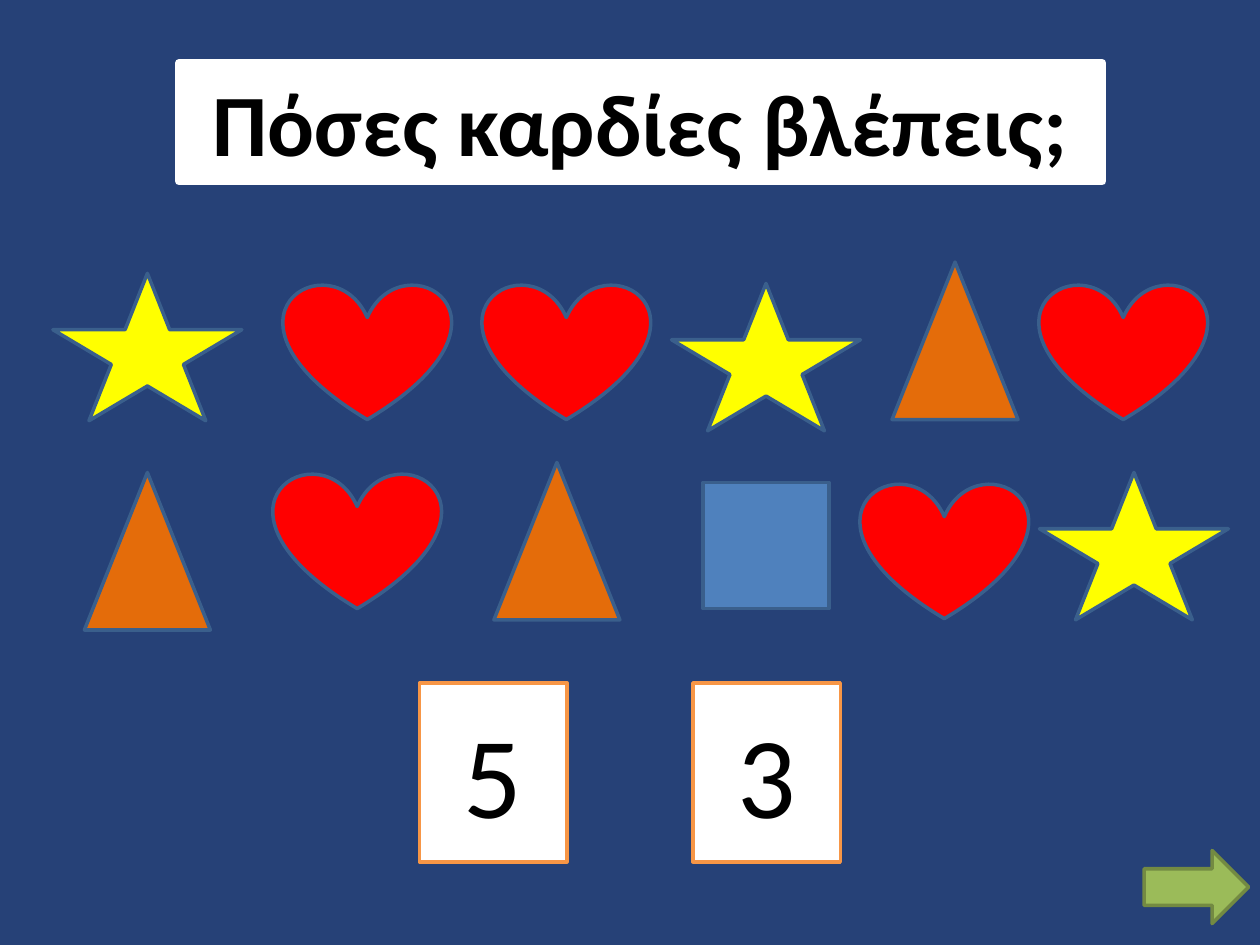
import pptx
import pptx.dml.color
import pptx.enum.shapes
import pptx.enum.text
import pptx.oxml
import pptx.oxml.ns
import pptx.util
from pptx.util import Inches

SHAPE = pptx.enum.shapes.MSO_SHAPE

COLORS = {
    "background": "264177",
    "star": "FFFF00",
    "heart": "FF0000",
    "triangle": "E46C0A",
    "square": "4F81BD",
    "figure_line": "3A5F8C",
    "white": "FFFFFF",
    "answer_line": "F79646",
    "arrow": "9BBB59",
    "arrow_line": "738A42",
    "text": "000000",
}

# Preset, width and height of each kind of figure
FIGURES = {
    "star": (SHAPE.STAR_5_POINT, 1.5, 1.17),
    "heart": (SHAPE.HEART, 1.33, 1.08),
    "triangle": (SHAPE.ISOSCELES_TRIANGLE, 1, 1.25),
    "square": (SHAPE.RECTANGLE, 1, 1),
}

# Kind, left and top of each figure to count
FIGURE_PLACES = [
    # Upper row
    ("star", 0.42, 2.17),
    ("heart", 2.25, 2.25),
    ("heart", 3.83, 2.25),
    ("star", 5.33, 2.25),
    ("triangle", 7.08, 2.08),
    ("heart", 8.25, 2.25),
    # Lower row
    ("triangle", 0.67, 3.75),
    ("heart", 2.17, 3.75),
    ("triangle", 3.92, 3.67),
    ("square", 5.58, 3.83),
    ("heart", 6.83, 3.83),
    ("star", 8.25, 3.75),
]


def color(name):
    return pptx.dml.color.RGBColor.from_string(COLORS[name])


def add_figure(slide, preset, left, top, width, height, fill, line, line_width=2):
    shape = slide.shapes.add_shape(
        preset, Inches(left), Inches(top), Inches(width), Inches(height))
    shape.shadow.inherit = False
    shape.fill.solid()
    shape.fill.fore_color.rgb = color(fill)
    shape.line.color.rgb = color(line)
    shape.line.width = pptx.util.Pt(line_width)
    return shape


def write_text(shape, text, size, anchor, bold=False):
    shape.text_frame.word_wrap = True
    shape.text_frame.vertical_anchor = anchor
    paragraph = shape.text_frame.paragraphs[0]
    paragraph.alignment = pptx.enum.text.PP_ALIGN.CENTER
    run = paragraph.add_run()
    run.text = text
    font = paragraph.font
    font.name = "Calibri"
    font.size = pptx.util.Pt(size)
    font.bold = bold
    font.color.rgb = color("text")
    return run


def outline_text(run, line_width):
    outline = pptx.oxml.parse_xml(
        f'<a:ln {pptx.oxml.ns.nsdecls("a")} w="{pptx.util.Pt(line_width)}"><a:solidFill>'
        f'<a:srgbClr val="{COLORS["text"]}"/></a:solidFill></a:ln>')
    run._r.get_or_add_rPr().insert(0, outline)


def add_title(slide, text):
    box = add_figure(slide, SHAPE.RECTANGLE, 1.42, 0.5, 7.33, 0.94, "white", "white", 4.5)
    run = write_text(box, text, 50, pptx.enum.text.MSO_ANCHOR.TOP, bold=True)
    outline_text(run, 0.75)


def add_answer(slide, text, left):
    box = add_figure(slide, SHAPE.RECTANGLE, left, 5.42, 1.17, 1.42, "white", "answer_line")
    write_text(box, text, 66, pptx.enum.text.MSO_ANCHOR.MIDDLE)


def main():
    presentation = pptx.Presentation()
    presentation.slide_width = Inches(10)
    presentation.slide_height = Inches(7.5)
    slide = presentation.slides.add_slide(presentation.slide_layouts[6])
    slide.background.fill.solid()
    slide.background.fill.fore_color.rgb = color("background")

    # Question
    add_title(slide, "Πόσες καρδίες βλέπεις;")

    # Figures to count
    for kind, left, top in FIGURE_PLACES:
        preset, width, height = FIGURES[kind]
        add_figure(slide, preset, left, top, width, height, kind, "figure_line")

    # Answers
    add_answer(slide, "5", 3.33)
    add_answer(slide, "3", 5.5)

    # Arrow to the next question
    add_figure(slide, SHAPE.RIGHT_ARROW, 9.08, 6.75, 0.83, 0.58, "arrow", "arrow_line")

    presentation.save("out.pptx")


if __name__ == "__main__":
    main()
